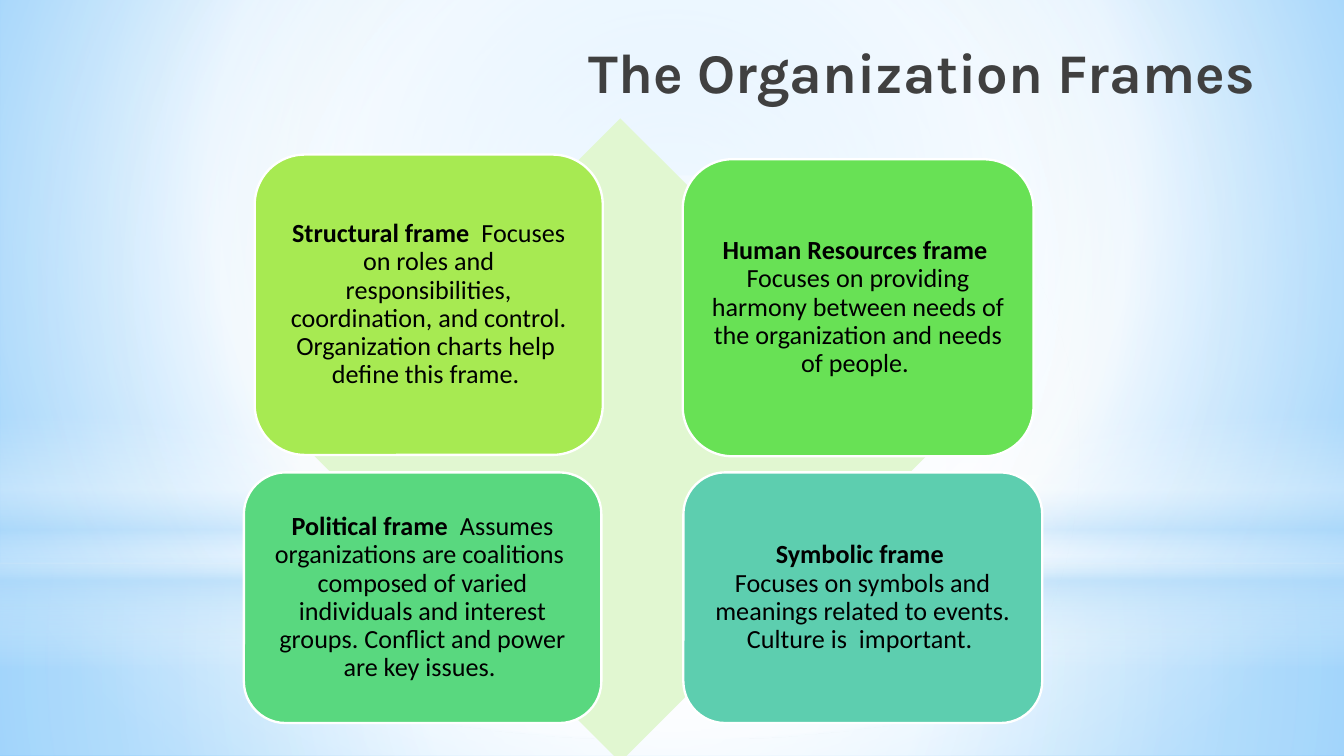
from pptx import Presentation
from pptx import util as u
from pptx.dml.color import RGBColor
from pptx.enum import shapes, text
from pptx.oxml import parse_xml
from pptx.oxml import ns

PX = 4572
WIDTH, HEIGHT = 2000, 1125

WHITE = RGBColor(0xFF, 0xFF, 0xFF)
BLACK = RGBColor(0x00, 0x00, 0x00)
CHARCOAL = RGBColor(0x40, 0x40, 0x40)
SKY = RGBColor(0x9E, 0xD5, 0xFF)
AZURE = RGBColor(0x5B, 0xB9, 0xFF)
MIST = RGBColor(0xB4, 0xDC, 0xFA)
PALE_GREEN = RGBColor(0xE1, 0xF7, 0xD1)
LIME = RGBColor(0xA7, 0xEA, 0x52)
GREEN = RGBColor(0x68, 0xE1, 0x55)
EMERALD = RGBColor(0x59, 0xD8, 0x7F)
TEAL = RGBColor(0x5D, 0xCE, 0xAF)

CENTRE = (50, 50, 50, 50)
RECT = shapes.MSO_SHAPE.RECTANGLE
OVAL = shapes.MSO_SHAPE.OVAL

LAYERS = [
    (RECT, (0, 838, 2000, 287), [(0, WHITE, 91), (37, WHITE, 76), (100, MIST, 79)], CENTRE),
    (RECT, (0, 0, 2000, 838), [(0, WHITE, 89), (48, WHITE, 62), (100, MIST, 79)], CENTRE),
    (RECT, (0, 618, 2000, 376), [(0, WHITE, 0), (29, WHITE, 30), (45, MIST, 40),
                                 (55, WHITE, 26), (65, MIST, 60), (100, WHITE, 0)], None),
    (OVAL, (0, 262, 2000, 838), [(0, WHITE, 100), (56, WHITE, 0)], CENTRE),
]

FRAMES = [
    ((16, 54, 518, 447), LIME, "Structural frame  ", False,
     "Focuses on roles and responsibilities, coordination, and control. "
     "Organization charts help  define this frame. "),
    ((653, 61, 522, 442), GREEN, "Human Resources frame ", True,
     "Focuses on providing harmony between needs of the organization and needs of people. "),
    ((0, 527, 532, 373), EMERALD, "Political frame  ", False,
     "Assumes organizations are coalitions  composed of varied individuals "
     "and interest groups. Conflict and power are key issues. "),
    ((654, 527, 534, 373), TEAL, "Symbolic frame ", True,
     "Focuses on symbols and meanings related to events. Culture is  important. "),
]


def emu(box):
    """Turn a box of px into EMU lengths."""
    return [u.Emu(side * PX) for side in box]


def gradient(stops, focus):
    """Build a gradient fill, circular about a focus or running downwards."""
    marks = "".join(
        f'<a:gs pos="{place * 1000}"><a:srgbClr val="{color}">'
        f'<a:alpha val="{opacity * 1000}"/></a:srgbClr></a:gs>'
        for place, color, opacity in stops)
    if focus:
        sides = " ".join(f'{side}="{share * 1000}"' for side, share in zip("ltrb", focus))
        course = f'<a:path path="circle"><a:fillToRect {sides}/></a:path>'
    else:
        course = '<a:lin ang="5400000" scaled="0"/>'
    return parse_xml(f'<a:gradFill {ns.nsdecls("a")} rotWithShape="1">'
                     f'<a:gsLst>{marks}</a:gsLst>{course}</a:gradFill>')


def add_solid(parent, kind, box, color):
    """Add a plain filled shape without line or shadow."""
    shape = parent.shapes.add_shape(kind, *emu(box))
    shape.shadow.inherit = False
    shape.fill.solid()
    shape.fill.fore_color.rgb = color
    shape.line.fill.background()
    return shape


def replace_fill(holder, fill):
    """Swap the solid fill of an element for a gradient."""
    solid = holder.find(ns.qn("a:solidFill"))
    holder.replace(solid, fill)


def draw_backdrop(page, box):
    """Paint the sky gradient and its light layers behind the title."""
    left, top, _, _ = box
    page.background.fill.solid()
    page.background.fill.fore_color.rgb = WHITE
    sky = gradient([(0, SKY, 100), (60, WHITE, 100), (100, AZURE, 100)], (20, 10, 20, 60))
    replace_fill(next(page.element.iter(ns.qn("p:bgPr"))), sky)
    for kind, (x, y, width, height), stops, focus in LAYERS:
        layer = add_solid(page, kind, (left + x, top + y, width, height), WHITE)
        replace_fill(layer.element.spPr, gradient(stops, focus))
        page.shapes.title.element.addprevious(layer.element)


def add_span(para, words, size, font, color, bold):
    """Add one formatted run to a paragraph."""
    span = para.add_run()
    span.text = words
    span.font.size = u.Pt(size)
    span.font.name = font
    span.font.bold = bold
    span.font.color.rgb = color


def set_frame(frame, anchor, inset):
    """Set wrapping, anchor and equal insets of a text frame."""
    frame.word_wrap = True
    frame.auto_size = text.MSO_AUTO_SIZE.NONE
    frame.vertical_anchor = anchor
    frame.margin_left = frame.margin_right = u.Emu(inset * PX)
    frame.margin_top = frame.margin_bottom = u.Emu(inset * PX)


def write_title(page, box):
    """Place the right-aligned title."""
    title = page.shapes.title
    title.left, title.top, title.width, title.height = emu(box)
    set_frame(title.text_frame, text.MSO_ANCHOR.BOTTOM, 20)
    para = title.text_frame.paragraphs[0]
    para.alignment = text.PP_ALIGN.RIGHT
    add_span(para, "The Organization Frames ", 30, "Karla", CHARCOAL, True)


def draw_matrix(page, box):
    """Draw the diamond and the four frames over it."""
    left, top, _, height = box
    matrix = page.shapes.add_group_shape()
    add_solid(matrix, shapes.MSO_SHAPE.DIAMOND, (left + 81, top, height, height), PALE_GREEN)
    for (x, y, wide, high), color, name, breaks, summary in FRAMES:
        card = add_solid(matrix, shapes.MSO_SHAPE.ROUNDED_RECTANGLE,
                         (left + x, top + y, wide, high), color)
        card.line.color.rgb = WHITE
        card.line.width = u.Pt(1.25)
        set_frame(card.text_frame, text.MSO_ANCHOR.MIDDLE, 12)
        para = card.text_frame.paragraphs[0]
        para.alignment = text.PP_ALIGN.CENTER
        para.line_spacing = 0.9
        add_span(para, name, 14, "Calibri", BLACK, True)
        if breaks:
            para.add_line_break()
        add_span(para, summary, 14, "Calibri", BLACK, False)


def main():
    """Build and save the deck."""
    deck = Presentation()
    deck.slide_width, deck.slide_height = emu((WIDTH, HEIGHT))
    page = deck.slides.add_slide(deck.slide_layouts[0])
    subtitle = page.placeholders[1].element
    subtitle.getparent().remove(subtitle)
    draw_backdrop(page, (0, 0, WIDTH, HEIGHT))
    write_title(page, (139, 50, 1770, 126))
    draw_matrix(page, (363, 176, 1188, 958))
    deck.save("out.pptx")


if __name__ == "__main__":
    main()
